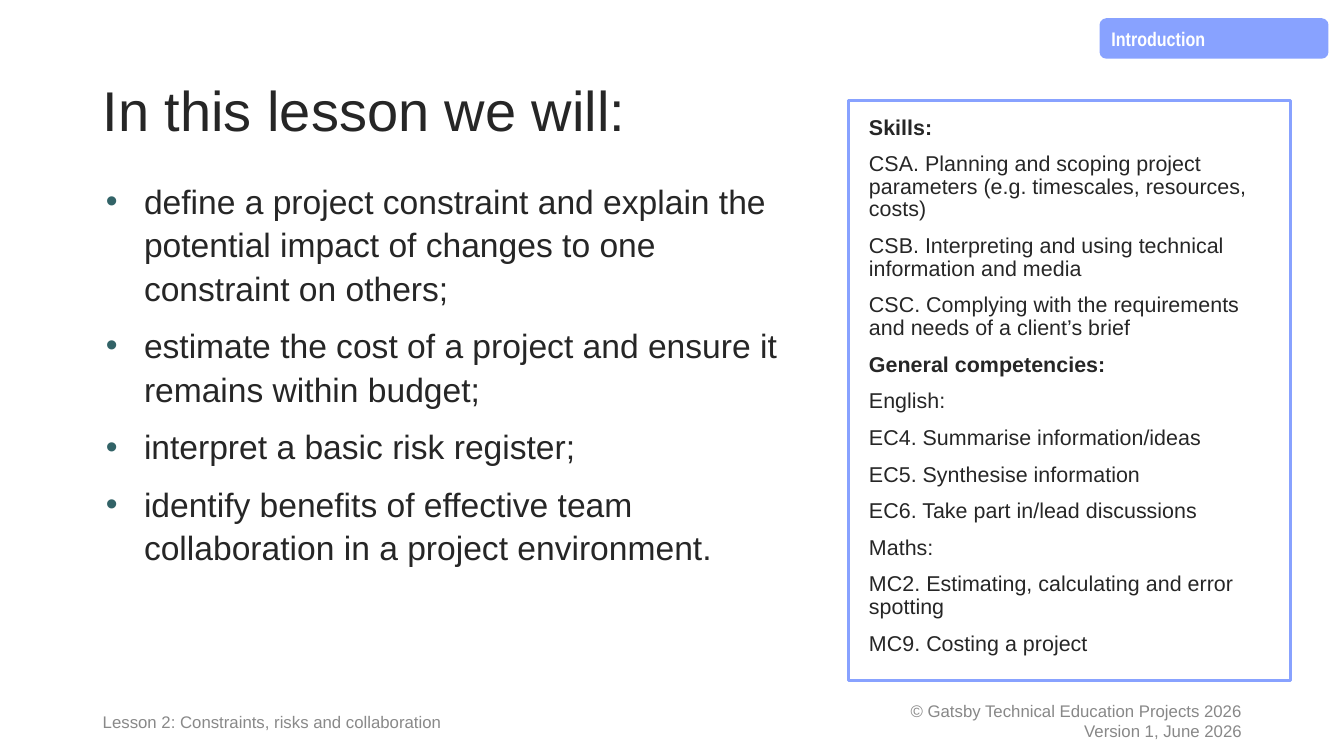
"""Build the lesson objectives slide."""
from lxml.etree import SubElement
from pptx import Presentation
from pptx.dml.color import RGBColor
from pptx.enum.shapes import MSO_SHAPE
from pptx.enum.text import MSO_ANCHOR, PP_ALIGN
from pptx.oxml.ns import qn
from pptx.util import Cm, Pt

COLORS = {
    "text": "262626",
    "accent": "88A2FF",
    "bullet": "326367",
    "white": "FFFFFF",
    "copyright": "888888",
    "footer": "898989",
}

OBJECTIVES = [
    "define a project constraint and explain the potential impact of changes "
    "to one constraint on others;",
    "estimate the cost of a project and ensure it remains within budget;",
    "interpret a basic risk register;",
    "identify benefits of effective team collaboration in a project environment.",
]

SKILL_HEADINGS = ("Skills:", "General competencies:")
SKILLS = [
    SKILL_HEADINGS[0],
    "CSA. Planning and scoping project parameters (e.g. timescales, resources, costs)",
    "CSB. Interpreting and using technical information and media",
    "CSC. Complying with the requirements and needs of a client’s brief",
    SKILL_HEADINGS[1],
    "English:",
    "EC4. Summarise information/ideas",
    "EC5. Synthesise information",
    "EC6. Take part in/lead discussions",
    "Maths:",
    "MC2. Estimating, calculating and error spotting",
    "MC9. Costing a project",
]


def rgb(name):
    """Return the named colour."""
    return RGBColor.from_string(COLORS[name])


def set_attrs(obj, values):
    """Set each attribute of obj from a dict."""
    for name, value in values.items():
        setattr(obj, name, value)


def add_bullet(p):
    """Give a paragraph a hanging coloured bullet."""
    pPr = p._p.get_or_add_pPr()
    pPr.set("marL", str(Cm(1.27)))
    pPr.set("indent", str(Cm(-0.96)))
    clr = SubElement(pPr, qn("a:buClr"))
    SubElement(clr, qn("a:srgbClr")).set("val", COLORS["bullet"])
    SubElement(pPr, qn("a:buFont")).set("typeface", "Arial")
    SubElement(pPr, qn("a:buChar")).set("char", "•")


def write_text(sp, lines, size, color="text", font="Arial", bold=(), spacing=1.0,
               before=0, align=PP_ALIGN.LEFT, anchor=MSO_ANCHOR.TOP,
               inset=(0.25, 0.13), bullets=False):
    """Fill a shape with one paragraph per line."""
    tf = sp.text_frame
    set_attrs(tf, {
        "word_wrap": True,
        "vertical_anchor": anchor,
        "margin_left": Cm(inset[0]),
        "margin_right": Cm(inset[0]),
        "margin_top": Cm(inset[1]),
        "margin_bottom": Cm(inset[1]),
    })
    for i, line in enumerate(lines):
        p = tf.add_paragraph() if i else tf.paragraphs[0]
        set_attrs(p, {
            "alignment": align,
            "line_spacing": spacing,
            "space_before": Pt(before if i else 0),
        })
        if bullets:
            add_bullet(p)
        r = p.add_run()
        r.text = line
        set_attrs(r.font, {"name": font, "size": Pt(size), "bold": line in bold})
        r.font.color.rgb = rgb(color)


def add_text(s, box, lines, size, **fmt):
    """Add a text box."""
    sp = s.shapes.add_textbox(*map(Cm, box))
    write_text(sp, lines, size, **fmt)


def add_panel(s, kind, box, fill, line, lines, size, **fmt):
    """Add a filled shape with text and an optional outline."""
    sp = s.shapes.add_shape(kind, *map(Cm, box))
    sp.shadow.inherit = False
    sp.fill.solid()
    sp.fill.fore_color.rgb = rgb(fill)
    if line:
        sp.line.color.rgb = rgb(line)
        sp.line.width = Pt(2.25)
    else:
        sp.line.fill.background()
    write_text(sp, lines, size, **fmt)


def main():
    """Build and save the slide."""
    prs = Presentation()
    set_attrs(prs, {"slide_width": Cm(33.87), "slide_height": Cm(19.05)})
    s = prs.slides.add_slide(prs.slide_layouts[6])
    middle = MSO_ANCHOR.MIDDLE

    add_text(s, (20.12, 17.65, 11.43, 1.02),
             ["© Gatsby Technical Education Projects 2026", "Version 1, June 2026"],
             12, color="copyright", align=PP_ALIGN.RIGHT, anchor=middle)
    add_text(s, (2.34, 1.02, 29.21, 3.68), ["In this lesson we will:"], 40,
             spacing=0.9, anchor=middle)
    add_text(s, (2.11, 4.34, 17.78, 12.09), OBJECTIVES, 24,
             spacing=1.08, before=10, bullets=True)
    add_panel(s, MSO_SHAPE.RECTANGLE, (21.39, 2.54, 11.13, 14.61), "white", "accent",
              SKILLS, 15.3, bold=SKILL_HEADINGS, spacing=0.88, before=10,
              inset=(0.51, 0.41))
    add_panel(s, MSO_SHAPE.FLOWCHART_ALTERNATE_PROCESS, (27.71, 0.46, 5.77, 1.02),
              "accent", None, ["Introduction"], 14, color="white",
              font="Arial Narrow", bold=("Introduction",), spacing=1.08)
    add_text(s, (2.34, 17.65, 11.68, 1.02),
             ["Lesson 2: Constraints, risks and collaboration"], 12,
             color="footer", spacing=1.08, anchor=middle)
    prs.save("out.pptx")


if __name__ == "__main__":
    main()
